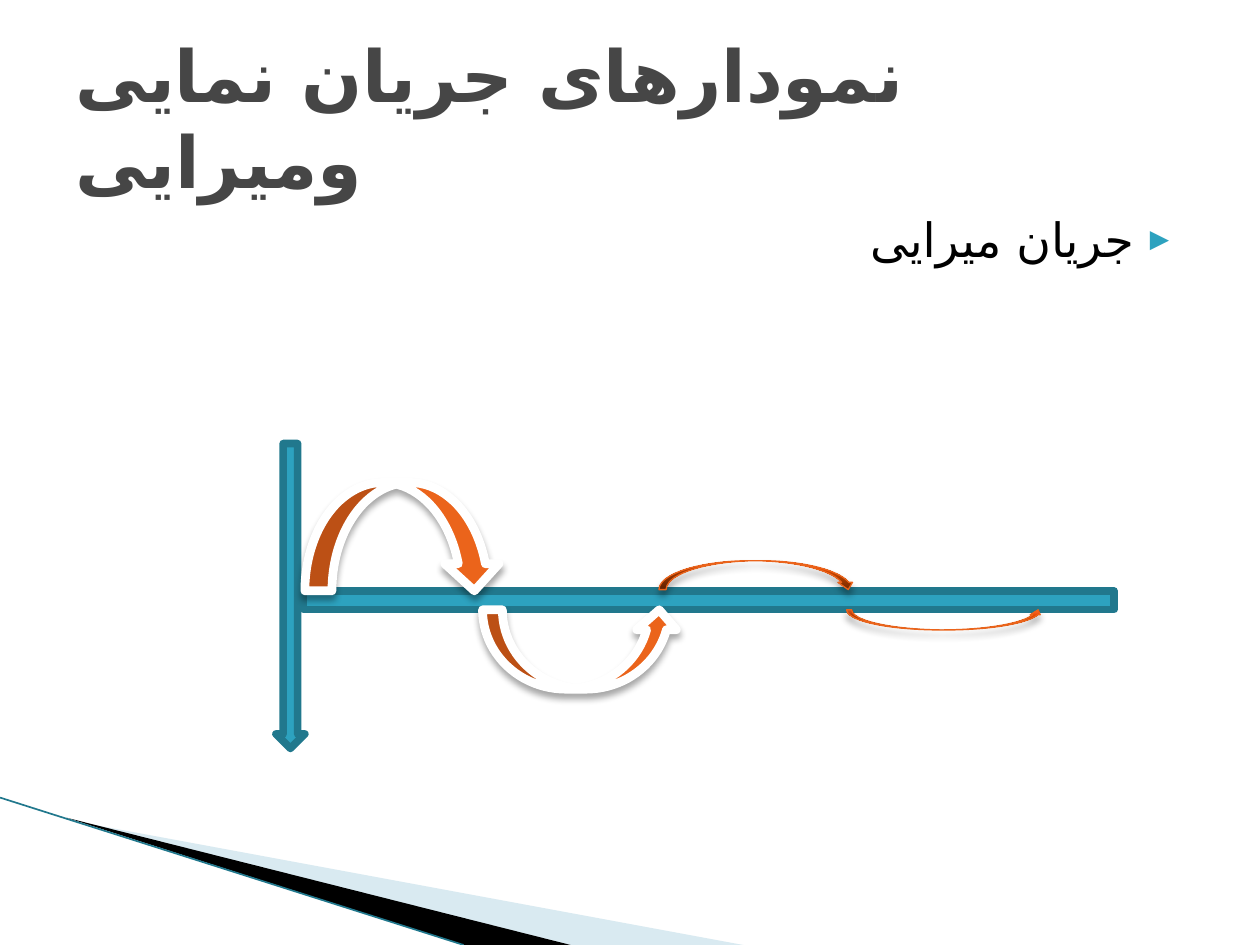
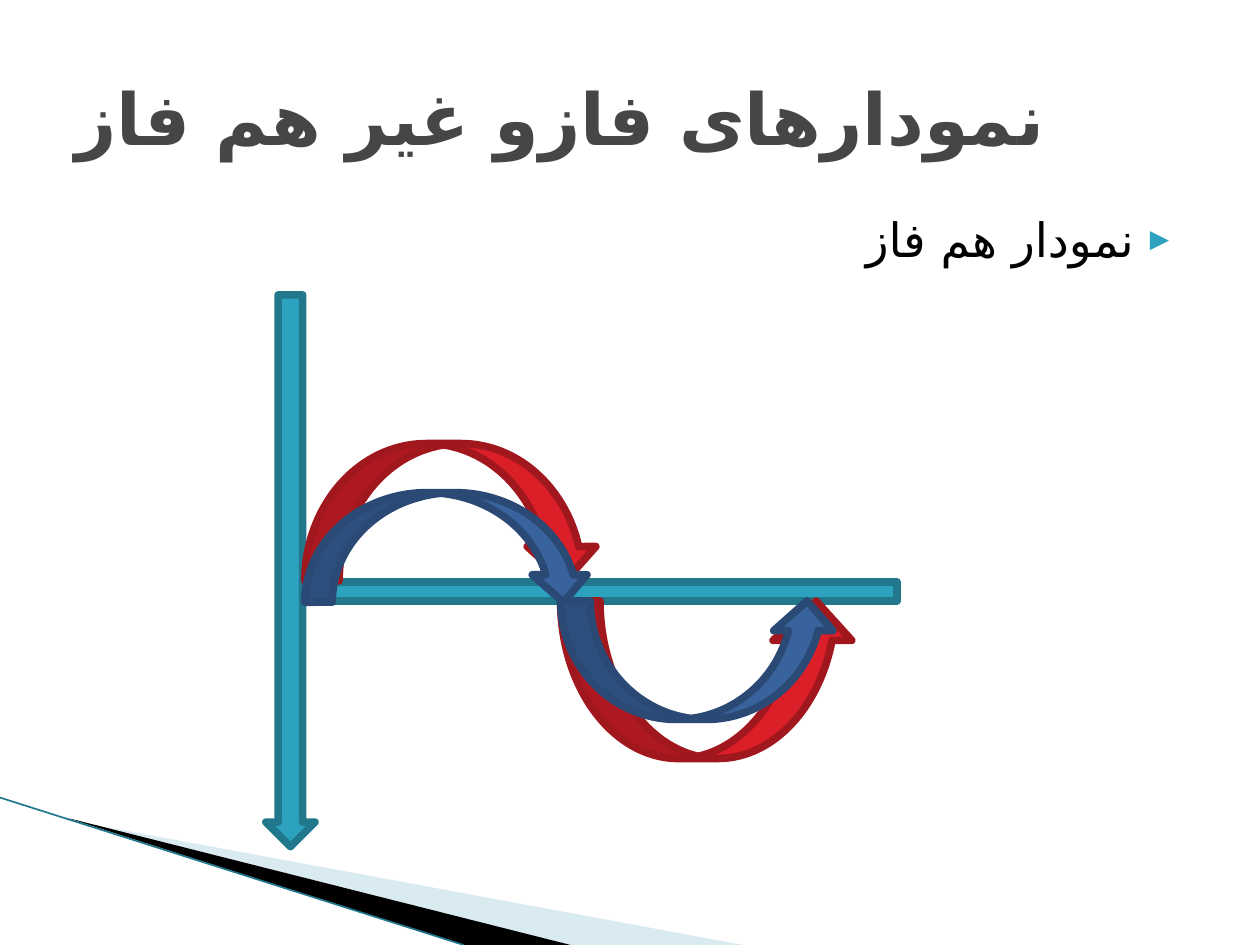
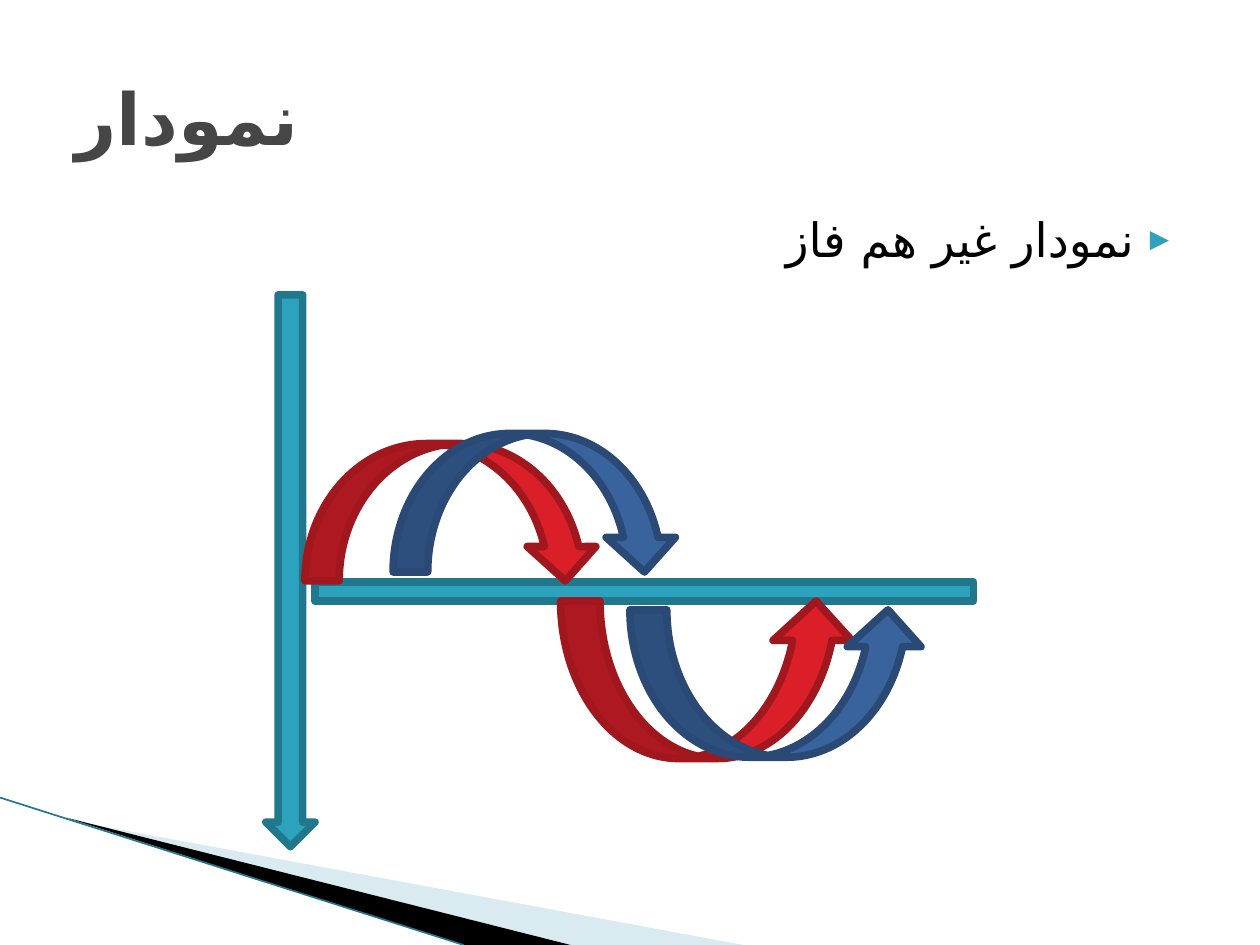
from dataclasses import dataclass

from lxml.etree import SubElement
from pptx import Presentation
from pptx.dml.color import RGBColor
from pptx.enum.shapes import MSO_CONNECTOR, MSO_SHAPE
from pptx.enum.text import MSO_ANCHOR, MSO_AUTO_SIZE, PP_ALIGN
from pptx.oxml.ns import qn
from pptx.util import Inches, Pt


@dataclass(frozen=True)
class Theme:
    font: str = "DejaVu Sans Mono"
    script_font: str = "DejaVu Sans"
    title_size: float = 41
    body_size: float = 27
    title: str = "464646"
    body: str = "000000"
    accent: str = "2DA2BF"
    accent_dark: str = "21788D"
    pale: str = "A0CBDC"
    black: str = "000000"
    copper: tuple = ((0, "732800"), (50, "B94100"), (70, "E64900"), (100, "FF6933"))


# Looks of the waves: fill (a colour or gradient stops), line, line width, shadow
T = Theme()
AXIS = dict(fill=T.accent, line=T.accent_dark, width=4.33)
RED = dict(fill="DA1F28", line="A1171E", width=4.33)
BLUE = dict(fill="39639D", line="2A4974", width=4.33)
ORANGE = dict(fill="EB641B", line="FFFFFF", width=5, shadow=True)
COPPER = dict(fill=T.copper, line="EB641B", width=0.75, shadow=True)

UP, DOWN = MSO_SHAPE.CURVED_UP_ARROW, MSO_SHAPE.CURVED_DOWN_ARROW


def rgb(value):
    return RGBColor.from_string(value)


def add_xml(parent, tag, **attrs):
    return SubElement(parent, qn(tag), {k: str(v) for k, v in attrs.items()})


class Deck:
    def __init__(self, theme):
        self.theme = theme
        self.prs = Presentation()
        self.prs.slide_width, self.prs.slide_height = Inches(10), Inches(7.5)
        self.s = None

    def new_slide(self, title, item):
        self.s = self.prs.slides.add_slide(self.prs.slide_layouts[1])
        self.corner()
        self.title(title)
        self.bullet(item)

    # Corner sweep shared by all slides
    def corner(self):
        t = self.theme
        self.wedge([(0.55, 6.51), (5.9, 7.5), (4.53, 7.5)], t.pale, alpha=40)
        self.wedge([(0.53, 6.49), (4.53, 7.5), (3.68, 7.5)], t.black)
        ends = [Inches(v) for v in (0, 6.33, 3.68, 7.5)]
        edge = self.s.shapes.add_connector(MSO_CONNECTOR.STRAIGHT, *ends)
        edge.line.color.rgb = rgb(t.accent_dark)
        edge.line.width = Pt(0.95)
        add_xml(edge._element.spPr, "a:effectLst")

    def wedge(self, points, color, alpha=100):
        pts = [(Inches(x), Inches(y)) for x, y in points]
        builder = self.s.shapes.build_freeform(*pts[0])
        builder.add_line_segments(pts[1:], close=True)
        sp = builder.convert_to_shape()
        sp.shadow.inherit = False
        sp.fill.solid()
        sp.fill.fore_color.rgb = rgb(color)
        sp.line.fill.background()
        if alpha < 100:
            clr = sp._element.spPr.find(qn("a:solidFill"))[0]
            add_xml(clr, "a:alpha", val=alpha * 1000)

    # Placeholder text, right to left
    def place(self, sp, box, text, frame, font, align):
        sp.left, sp.top, sp.width, sp.height = (Inches(v) for v in box)
        tf = sp.text_frame
        for name, value in dict(frame, word_wrap=True,
                                auto_size=MSO_AUTO_SIZE.NONE).items():
            setattr(tf, name, value)
        p = tf.paragraphs[0]
        p.alignment = align
        p.space_before = Pt(0)
        p._p.get_or_add_pPr().set("rtl", "1")
        r = p.add_run()
        r.text = text
        color = font.pop("color")
        for name, value in dict(font, name=self.theme.font).items():
            setattr(r.font, name, value)
        r.font.color.rgb = rgb(color)
        add_xml(r._r.get_or_add_rPr(), "a:cs", typeface=self.theme.script_font)
        return p

    def title(self, text):
        t = self.theme
        self.place(self.s.shapes.title, (0.5, 0.3, 9, 1.25), text,
                   dict(vertical_anchor=MSO_ANCHOR.MIDDLE),
                   dict(size=Pt(t.title_size), bold=True, color=t.title),
                   PP_ALIGN.LEFT)

    def bullet(self, text):
        t = self.theme
        p = self.place(self.s.placeholders[1], (0.5, 1.62, 9, 4.95), text,
                       dict(vertical_anchor=MSO_ANCHOR.TOP, margin_top=Inches(0.05)),
                       dict(size=Pt(t.body_size), bold=False, color=t.body),
                       PP_ALIGN.RIGHT)
        pPr = p._p.get_or_add_pPr()
        pPr.set("marL", str(Inches(0.4)))
        pPr.set("indent", str(Inches(-0.28)))
        add_xml(add_xml(pPr, "a:buClr"), "a:srgbClr", val=t.accent)
        add_xml(pPr, "a:buSzPct", val=68000)
        add_xml(pPr, "a:buFont", typeface=t.font)
        add_xml(pPr, "a:buChar", char="▶")

    # Diagram parts
    def shape(self, kind, box, fill, line, width, shadow=False):
        sp = self.s.shapes.add_shape(kind, *(Inches(v) for v in box))
        sp.shadow.inherit = False
        if isinstance(fill, str):
            sp.fill.solid()
            sp.fill.fore_color.rgb = rgb(fill)
        else:
            self.gradient(sp, fill)
        sp.line.color.rgb = rgb(line)
        sp.line.width = Pt(width)
        if shadow:
            effects = sp._element.spPr.find(qn("a:effectLst"))
            drop = add_xml(effects, "a:outerShdw", blurRad=Pt(4), dist=Pt(3),
                           dir=90 * 60000, rotWithShape=0)
            clr = add_xml(drop, "a:srgbClr", val=self.theme.black)
            add_xml(clr, "a:alpha", val=35000)

    def gradient(self, sp, stops):
        sp.fill.gradient()
        grad = sp._element.spPr.find(qn("a:gradFill"))
        for child in list(grad):
            grad.remove(child)
        gs_list = add_xml(grad, "a:gsLst")
        for pos, color in stops:
            gs = add_xml(gs_list, "a:gs", pos=pos * 1000)
            add_xml(gs, "a:srgbClr", val=color)
        add_xml(grad, "a:lin", ang=270 * 60000, scaled=0)

    def axes(self, vertical, horizontal):
        self.shape(MSO_SHAPE.DOWN_ARROW, vertical, **AXIS)
        self.shape(MSO_SHAPE.MATH_MINUS, horizontal, **AXIS)

    def waves(self, arcs):
        for kind, box, look in arcs:
            self.shape(kind, box, **look)


TALL_AXIS = (2.11, 2.34, 0.39, 4.38)
RED_WAVE = [(DOWN, (2.42, 3.52, 2.34, 1.09), RED),
            (UP, (4.45, 4.77, 2.34, 1.25), RED)]

# Title, list item, vertical axis, horizontal axis, arcs from back to front
SLIDES = [
    ("نمودارهای جریان نمایی ومیرایی", "جریان میرایی",
     (2.19, 3.52, 0.23, 2.42), (1.25, 4.45, 8.75, 0.63),
     [(DOWN, (5.23, 4.45, 1.56, 0.23), COPPER),
      (UP, (3.83, 4.84, 1.56, 0.63), ORANGE),
      (DOWN, (2.42, 3.83, 1.56, 0.86), ORANGE),
      (UP, (6.72, 4.84, 1.56, 0.16), COPPER)]),
    ("نمودارهای فازو غیر هم فاز", "نمودار هم فاز",
     TALL_AXIS, (1.56, 4.38, 6.41, 0.63),
     RED_WAVE + [(DOWN, (2.42, 3.91, 2.27, 0.87), BLUE),
                 (UP, (4.45, 4.77, 2.19, 0.94), BLUE)]),
    ("نمودار", "نمودار غیر هم فاز",
     TALL_AXIS, (1.56, 4.38, 7.11, 0.63),
     RED_WAVE + [(DOWN, (3.12, 3.44, 2.27, 1.1), BLUE),
                 (UP, (5, 4.84, 2.34, 1.17), BLUE)]),
]


def main():
    deck = Deck(T)
    for title, item, vertical, horizontal, arcs in SLIDES:
        deck.new_slide(title, item)
        deck.axes(vertical, horizontal)
        deck.waves(arcs)
    deck.prs.save("out.pptx")


if __name__ == "__main__":
    main()
